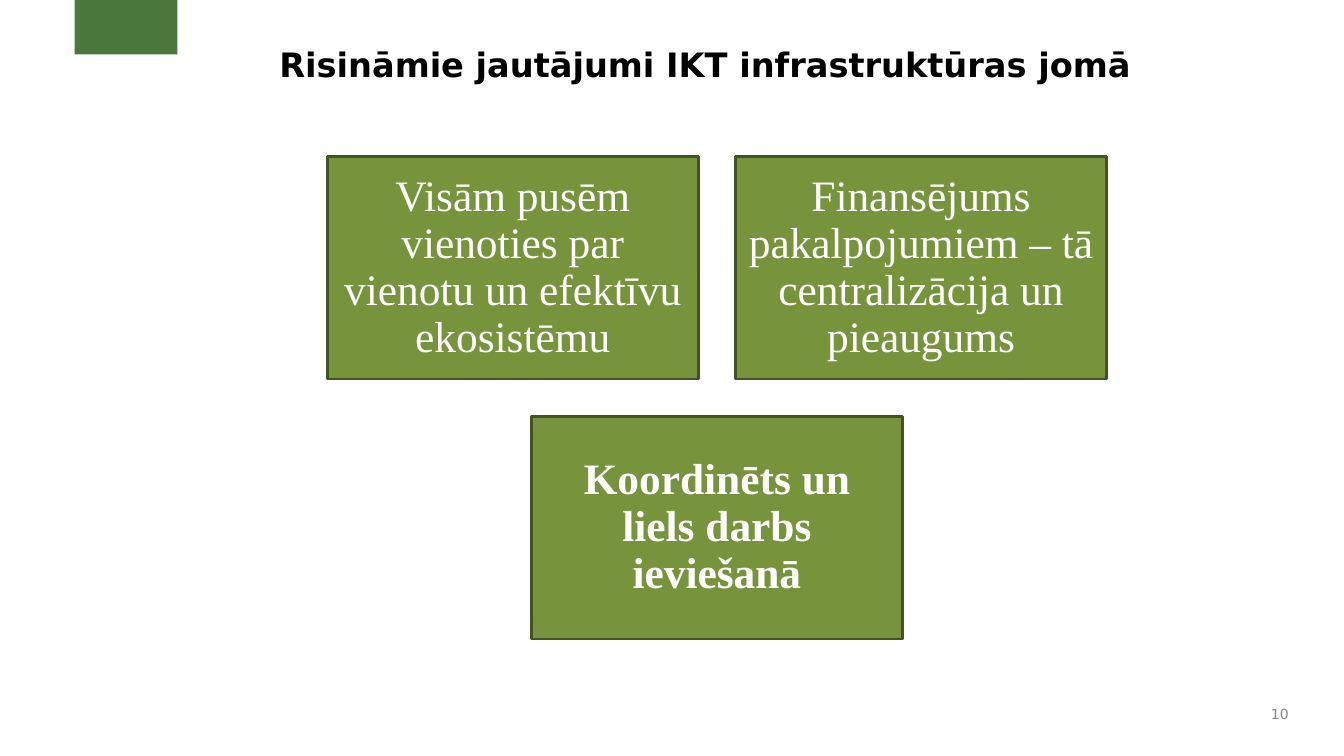
"""Build the slide on open questions in ICT infrastructure."""
from pptx import Presentation, util as u
from pptx.dml.color import RGBColor
from pptx.enum import shapes, text


def paint(fill, color):
    fill.solid()
    fill.fore_color.rgb = RGBColor.from_string(color)


def format_text(frame, font_name, size, color, bold, alignment, anchor, inset_x, inset_y):
    frame.word_wrap = True
    frame.auto_size = text.MSO_AUTO_SIZE.NONE
    frame.vertical_anchor = anchor
    frame.margin_left = frame.margin_right = u.Inches(inset_x)
    frame.margin_top = frame.margin_bottom = u.Inches(inset_y)
    paragraph = frame.paragraphs[0]
    paragraph.alignment = alignment
    for run in paragraph.runs:
        run.font.name = font_name
        run.font.size = u.Pt(size)
        run.font.bold = bold
        paint(run.font.fill, color)


presentation = Presentation()
presentation.slide_width = u.Inches(13.33)
presentation.slide_height = u.Inches(7.5)
slide = presentation.slides.add_slide(presentation.slide_layouts[5])

accent = slide.shapes.add_shape(
    shapes.MSO_SHAPE.RECTANGLE, u.Inches(0.74), 0, u.Inches(1.02), u.Inches(0.54))
accent.shadow.inherit = False
paint(accent.fill, "4A773C")
accent.line.fill.background()

title = slide.shapes.title
title.left, title.top = u.Inches(2.67), u.Inches(0.39)
title.width, title.height = u.Inches(8.89), u.Inches(1.13)
title.text_frame.text = "Risināmie jautājumi IKT infrastruktūras jomā"
format_text(title.text_frame, "DejaVu Sans", 24, "000000", True,
            text.PP_ALIGN.LEFT, text.MSO_ANCHOR.TOP, 0.1, 0.05)

page_number = slide.shapes.add_textbox(
    u.Inches(12.44), u.Inches(6.92), u.Inches(0.44), u.Inches(0.33))
page_number.text_frame.text = "10"
format_text(page_number.text_frame, "DejaVu Sans", 10, "898989", False,
            text.PP_ALIGN.RIGHT, text.MSO_ANCHOR.MIDDLE, 0.1, 0.05)

box_width, box_height, gap = 3.68, 2.21, 0.37
center_x, first_top = 7.11, 1.55
issue_rows = [
    [("Visām pusēm vienoties par vienotu un efektīvu ekosistēmu", False),
     ("Finansējums pakalpojumiem – tā centralizācija un pieaugums", False)],
    [("Koordinēts un liels darbs ieviešanā", True)],
]
for row_index, row in enumerate(issue_rows):
    row_width = len(row) * box_width + (len(row) - 1) * gap
    top = first_top + row_index * (box_height + gap)
    for column, (issue, bold) in enumerate(row):
        left = center_x - row_width / 2 + column * (box_width + gap)
        box = slide.shapes.add_shape(
            shapes.MSO_SHAPE.RECTANGLE, u.Inches(left), u.Inches(top),
            u.Inches(box_width), u.Inches(box_height))
        box.shadow.inherit = False
        paint(box.fill, "77933C")
        paint(box.line.fill, "445227")
        box.line.width = u.Pt(2)
        box.text_frame.text = issue
        box.text_frame.paragraphs[0].line_spacing = 0.9
        format_text(box.text_frame, "Times New Roman", 31, "FFFFFF", bold,
                    text.PP_ALIGN.CENTER, text.MSO_ANCHOR.MIDDLE, 0.13, 0.13)

presentation.save("out.pptx")
